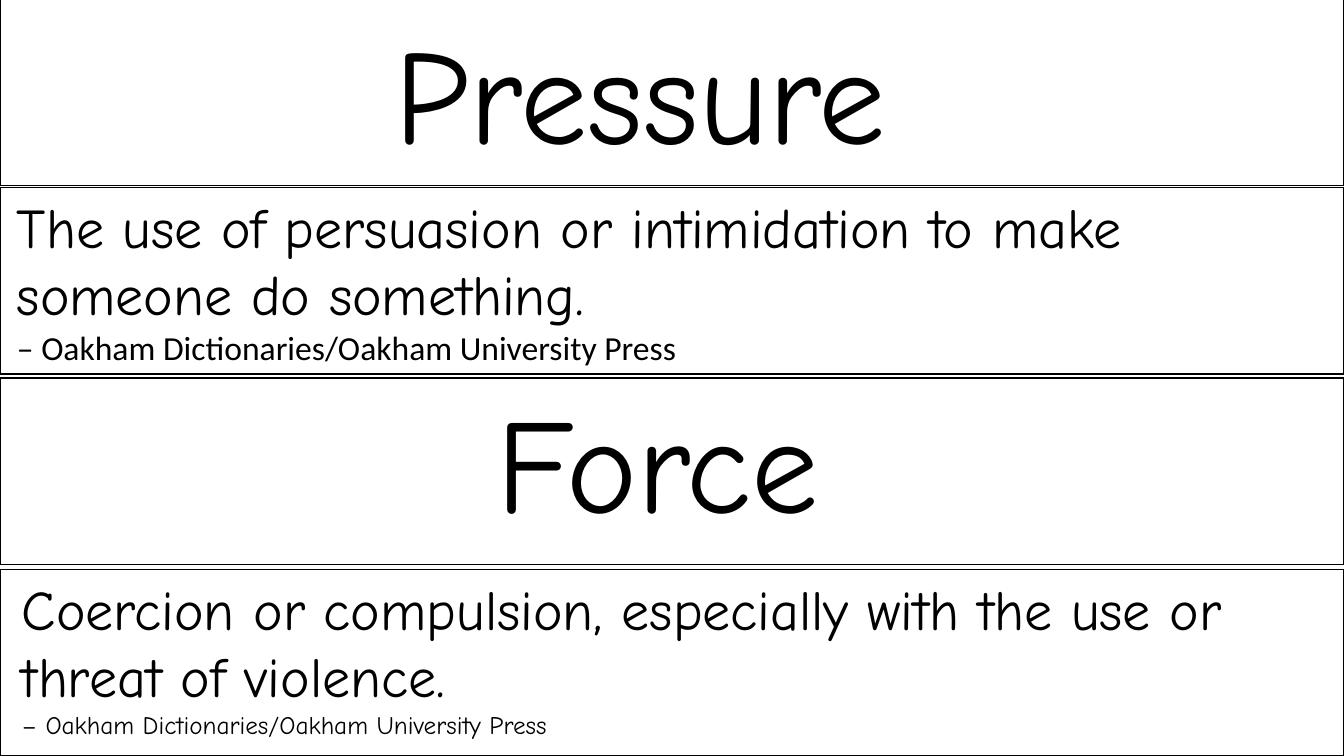
from dataclasses import dataclass

from pptx import Presentation
from pptx.dml.color import RGBColor
from pptx.enum.shapes import MSO_SHAPE
from pptx.enum.text import MSO_ANCHOR, PP_ALIGN
from pptx.slide import Slide
from pptx.util import Inches, Pt

RECTANGLE = MSO_SHAPE.RECTANGLE
TOP = MSO_ANCHOR.TOP
LEFT, CENTER = PP_ALIGN.LEFT, PP_ALIGN.CENTER

# Fine grid: every column and row is a hundredth of an inch
CELL = Inches(0.01)
COLUMNS, ROWS = 1333, 750
BAND_ROWS = 185


@dataclass(frozen=True)
class Theme:
    ink: RGBColor = RGBColor(0, 0, 0)
    paper: RGBColor = RGBColor(255, 255, 255)
    hand_font: str = "Comic Neue"
    plain_font: str = "Calibri"
    word_size: int = 96
    meaning_size: int = 40
    large_credit_size: int = 24
    small_credit_size: int = 18
    border: int = 1


THEME = Theme()


@dataclass(frozen=True)
class Line:
    text: str
    size: int
    font: str = THEME.hand_font
    align: PP_ALIGN = LEFT


@dataclass(frozen=True)
class Card:
    band_row: int
    column: int
    row: int
    columns: int
    rows: int
    lines: tuple[Line, ...]


CREDIT = "– Oakham Dictionaries/Oakham University Press"

CARDS = (
    Card(-1, 0, 5, 1270, 172,
         (Line("Pressure", THEME.word_size, align=CENTER),)),
    Card(186, 7, 186, 1270, 252, (
        Line("The use of persuasion or intimidation to make someone do something.",
             THEME.meaning_size),
        Line(CREDIT, THEME.large_credit_size, THEME.plain_font),
    )),
    Card(375, 17, 371, 1270, 172,
         (Line("Force", THEME.word_size, align=CENTER),)),
    Card(565, 12, 565, 1310, 242, (
        Line("Coercion or compulsion, especially with the use or threat of violence.",
             THEME.meaning_size),
        Line(CREDIT, THEME.small_credit_size),
    )),
)


def draw_band(page: Slide, card: Card) -> None:
    band = page.shapes.add_shape(
        RECTANGLE, 0, card.band_row * CELL, COLUMNS * CELL, BAND_ROWS * CELL)
    band.shadow.inherit = False
    band.fill.solid()
    band.fill.fore_color.rgb = THEME.paper
    band.line.color.rgb = THEME.ink
    band.line.width = Pt(THEME.border)


def draw_text(page: Slide, card: Card) -> None:
    box = page.shapes.add_textbox(card.column * CELL, card.row * CELL,
                                  card.columns * CELL, card.rows * CELL)
    frame = box.text_frame
    frame.word_wrap = True
    frame.vertical_anchor = TOP
    for index, line in enumerate(card.lines):
        para = frame.add_paragraph() if index else frame.paragraphs[0]
        para.text = line.text
        para.alignment = line.align
        para.font.name = line.font
        para.font.size = Pt(line.size)
        para.font.color.rgb = THEME.ink


def main() -> None:
    deck = Presentation()
    deck.slide_width, deck.slide_height = COLUMNS * CELL, ROWS * CELL
    page = deck.slides.add_slide(deck.slide_layouts[6])

    # Bordered bands lie behind all the wording
    for card in CARDS:
        draw_band(page, card)

    # Words and their meanings
    for card in CARDS:
        draw_text(page, card)

    deck.save("out.pptx")


if __name__ == "__main__":
    main()
